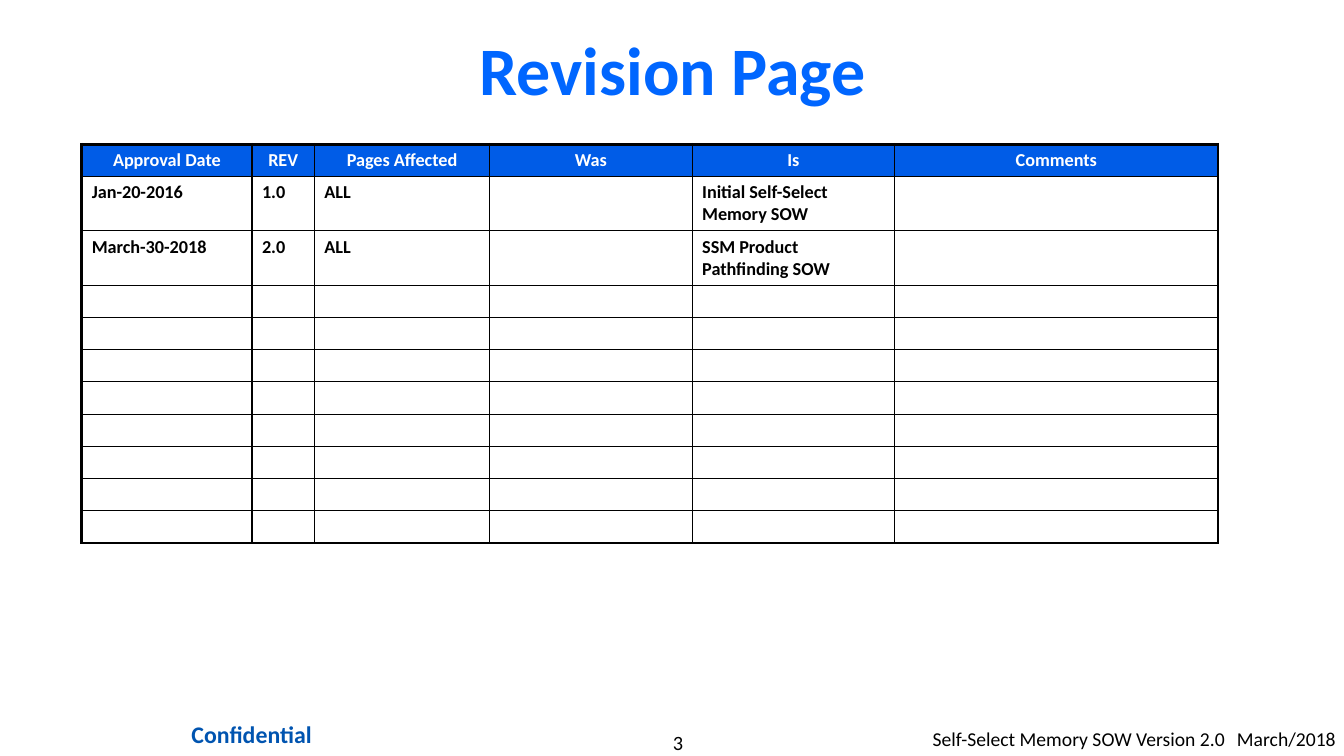
from lxml.etree import SubElement
from pptx import Presentation
from pptx.dml.color import RGBColor
from pptx.enum.text import MSO_ANCHOR as ANCHOR, PP_ALIGN as ALIGN
from pptx.oxml.ns import qn
from pptx.util import Inches, Pt

COLUMNS = {"Approval Date": 1.69, "REV": 0.62, "Pages Affected": 1.74,
           "Was": 2.01, "Is": 2.01, "Comments": 3.21}
REVISIONS = [["Jan-20-2016", "1.0", "ALL", "", "Initial Self-Select Memory SOW", ""],
             ["March-30-2018", "2.0", "ALL", "", "SSM Product Pathfinding SOW", ""]]
EMPTY_ROWS = 8
ROW_WEIGHTS = [0.32] + [0.54] * len(REVISIONS) + [0.32] * EMPTY_ROWS
THIN, THICK = 1, 2.25


def paint(target, color):
    """Colour a fill or a font with a hex string."""
    if hasattr(target, "solid"):
        target.solid()
        target.fore_color.rgb = RGBColor.from_string(color)
    else:
        target.color.rgb = RGBColor.from_string(color)


def share_box(prs, left, top, width, height):
    """Turn percentages of the slide into a box."""
    w, h = prs.slide_width, prs.slide_height
    return [int(part * side / 100)
            for part, side in zip((left, top, width, height), (w, h, w, h))]


def set_all(target, values):
    """Set each attribute listed in a dict."""
    for name, value in values.items():
        setattr(target, name, value)


def style_font(font, size, color, bold=False):
    """Give a font its face, size, weight and colour."""
    set_all(font, {"name": "Calibri", "size": Pt(size), "bold": bold})
    paint(font, color)


def add_label(slide, box, text, size, color, bold=False, align=ALIGN.CENTER,
              anchor=ANCHOR.TOP, insets=(0, 0), tab=None):
    """Place one line of text in a box, with an optional tab stop as a share of its width."""
    tf = slide.shapes.add_textbox(*box).text_frame
    side, end = map(Inches, insets)
    set_all(tf, {"word_wrap": True, "vertical_anchor": anchor, "margin_left": side,
                 "margin_right": side, "margin_top": end, "margin_bottom": end})
    p = tf.paragraphs[0]
    p.alignment = align
    if tab:
        stops = SubElement(p._p.get_or_add_pPr(), qn("a:tabLst"))
        SubElement(stops, qn("a:tab"), pos=str(int(tab * box[2])), algn="l")
    r = p.add_run()
    r.text = text
    style_font(r.font, size, color, bold)


def add_borders(cell, widths):
    """Draw black borders on a cell, given widths for left, right, top and bottom."""
    tcPr = cell._tc.get_or_add_tcPr()
    for side, width in zip("LRTB", widths):
        ln = SubElement(tcPr, qn(f"a:ln{side}"), w=str(Pt(width)))
        fill = SubElement(ln, qn("a:solidFill"))
        SubElement(fill, qn("a:srgbClr"), val="000000")


def add_revision_table(slide, box):
    """Fill a box with the revision table."""
    rows = [list(COLUMNS)] + REVISIONS + [[""] * len(COLUMNS)] * EMPTY_ROWS
    table = slide.shapes.add_table(len(rows), len(COLUMNS), *box).table
    set_all(table, {"first_row": False, "horz_banding": False})
    for column, weight in zip(table.columns, COLUMNS.values()):
        column.width = int(box[2] * weight / sum(COLUMNS.values()))
    for row, weight in zip(table.rows, ROW_WEIGHTS):
        row.height = int(box[3] * weight / sum(ROW_WEIGHTS))
    last_row, last_col = len(rows) - 1, len(COLUMNS) - 1
    for i, texts in enumerate(rows):
        for j, text in enumerate(texts):
            cell = table.cell(i, j)
            edges = (j == 0, j == last_col, i == 0, i == last_row)
            add_borders(cell, [THICK if edge else THIN for edge in edges])
            cell.text = text
            p = cell.text_frame.paragraphs[0]
            style_font(p.font, 13, "000000" if i else "FFFFFF", True)
            if i == 0:
                p.alignment = ALIGN.CENTER
                paint(cell.fill, "005CE7")
            else:
                cell.fill.background()


def add_footer(prs, slide):
    """Place the page number, the notice and the version along the bottom."""
    add_label(slide, share_box(prs, 41.71, 96.53, 17.48, 3.2), "3", 14.5, "000000")
    add_label(slide, share_box(prs, 11.63, 94.4, 14.18, 5.47), "Confidential", 17,
              "0054B0", True, insets=(0.12, 0.06))
    add_label(slide, share_box(prs, 69.39, 95.47, 30.61, 4.53),
              "Self-Select Memory SOW Version 2.0\tMarch/2018", 14, "000000",
              align=ALIGN.LEFT, insets=(0, 0.05), tab=0.74)


def main():
    """Build the revision slide and save it."""
    prs = Presentation()
    set_all(prs, {"slide_width": Inches(13.33), "slide_height": Inches(7.5)})
    slide = prs.slides.add_slide(prs.slide_layouts[6])
    paint(slide.background.fill, "FFFFFF")
    add_footer(prs, slide)
    add_label(slide, share_box(prs, 16.28, 4, 67.52, 10), "Revision Page", 48.5,
              "0066FF", True, anchor=ANCHOR.MIDDLE, insets=(0.1, 0.05))
    add_revision_table(slide, share_box(prs, 6.08, 19.07, 84.55, 52.8))
    prs.save("out.pptx")


if __name__ == "__main__":
    main()
